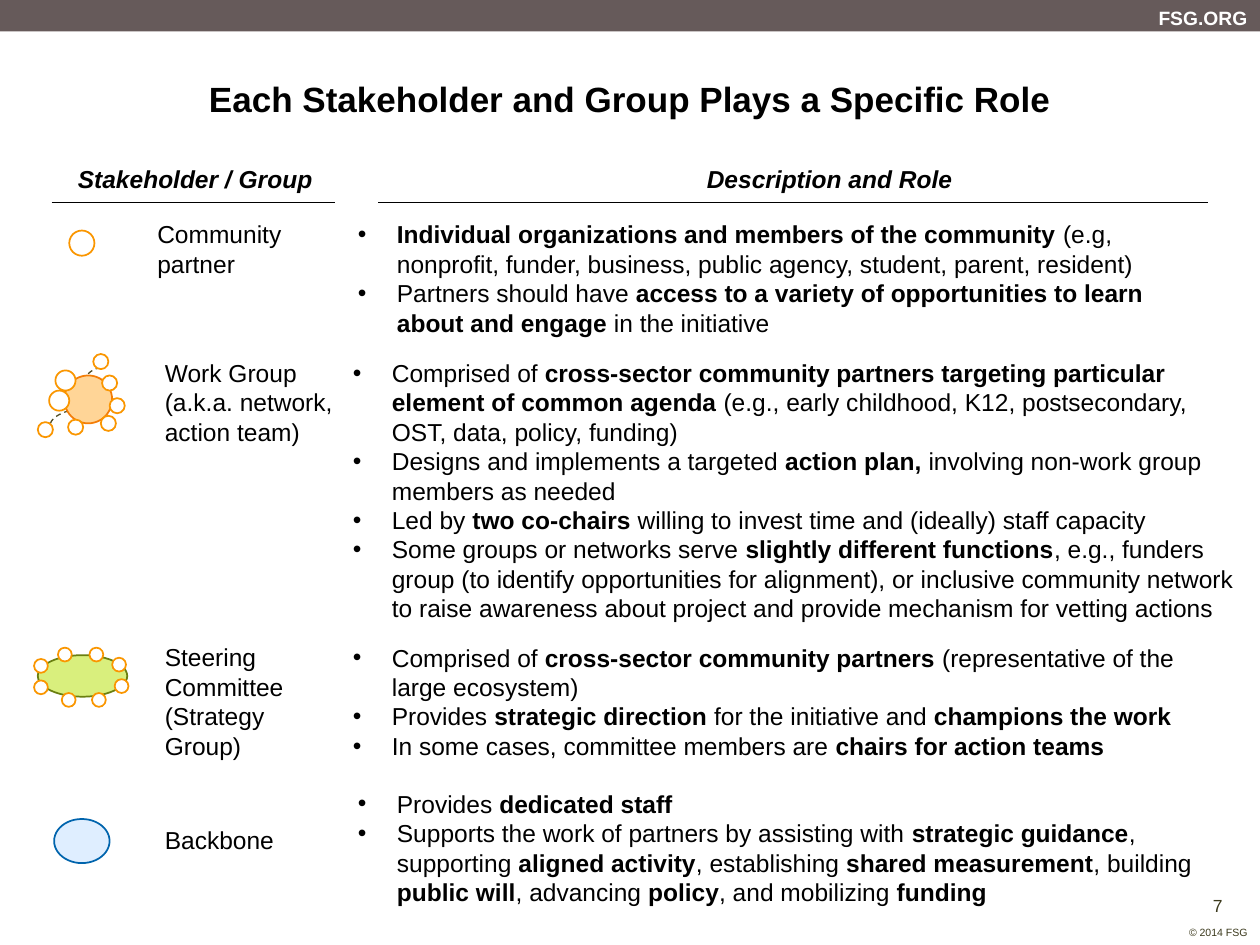
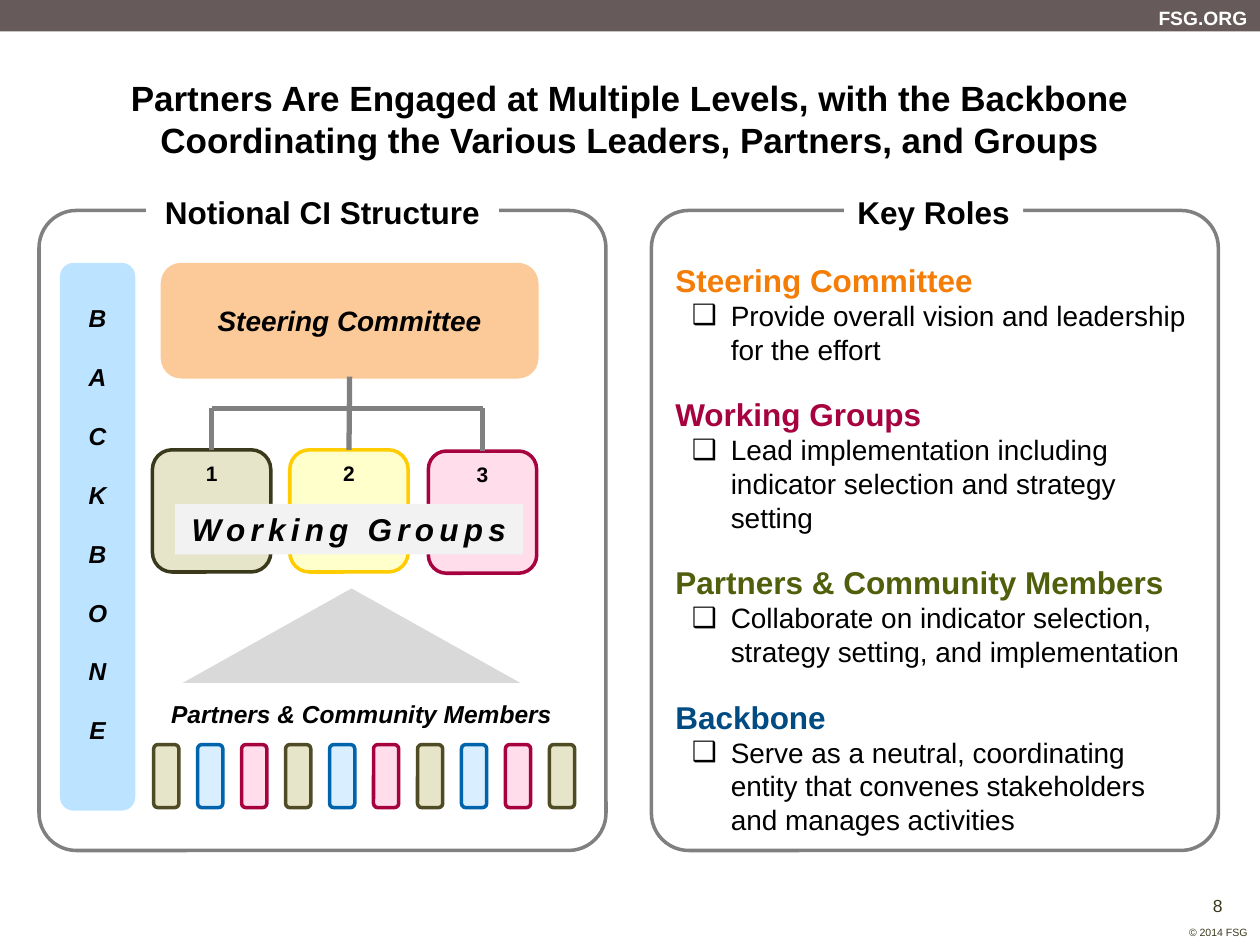
from itertools import cycle
from typing import NamedTuple

from lxml import etree
from pptx import Presentation
from pptx.dml.color import RGBColor
from pptx.enum.dml import MSO_LINE
from pptx.enum.shapes import MSO_CONNECTOR, MSO_SHAPE
from pptx.enum.text import MSO_ANCHOR, MSO_AUTO_SIZE, PP_ALIGN
from pptx.oxml.ns import qn
from pptx.util import Inches, Pt

RECT, ROUNDED = MSO_SHAPE.RECTANGLE, MSO_SHAPE.ROUNDED_RECTANGLE
OVAL, TRIANGLE = MSO_SHAPE.OVAL, MSO_SHAPE.ISOSCELES_TRIANGLE
STRAIGHT, CURVE = MSO_CONNECTOR.STRAIGHT, MSO_CONNECTOR.CURVE
DASH, NO_AUTOFIT = MSO_LINE.DASH, MSO_AUTO_SIZE.NONE
LEFT, CENTER, RIGHT = PP_ALIGN.LEFT, PP_ALIGN.CENTER, PP_ALIGN.RIGHT
TOP, MIDDLE = MSO_ANCHOR.TOP, MSO_ANCHOR.MIDDLE
BOTTOM_SIDE, TOP_SIDE = 2, 0

BLACK = RGBColor(0x00, 0x00, 0x00)
WHITE = RGBColor(0xFF, 0xFF, 0xFF)
BAND = RGBColor(0x66, 0x5A, 0x5A)
DARK_OLIVE = RGBColor(0x3B, 0x39, 0x1C)
OLIVE = RGBColor(0x4F, 0x4C, 0x25)
PALE_OLIVE = RGBColor(0xE6, 0xE4, 0xC9)
BEAD = RGBColor(0xFA, 0x96, 0x00)
ORANGE = RGBColor(0xF4, 0x7D, 0x07)
HUB = RGBColor(0xFF, 0xD5, 0x97)
PEACH = RGBColor(0xFC, 0xCA, 0x99)
GREEN = RGBColor(0x6A, 0x7F, 0x10)
DARK_GREEN = RGBColor(0x50, 0x5F, 0x0C)
LIME = RGBColor(0xD9, 0xEF, 0x7D)
BLUE = RGBColor(0x00, 0x64, 0xAD)
DARK_BLUE = RGBColor(0x00, 0x4B, 0x82)
ICE = RGBColor(0xDF, 0xEE, 0xFF)
PALE_BLUE = RGBColor(0xD9, 0xEF, 0xFF)
SKY = RGBColor(0xBC, 0xE3, 0xFF)
CRIMSON = RGBColor(0xA7, 0x02, 0x40)
PINK = RGBColor(0xFF, 0xDD, 0xEA)
YELLOW = RGBColor(0xFF, 0xCC, 0x00)
PALE_YELLOW = RGBColor(0xFF, 0xFF, 0xCC)
GREY = RGBColor(0x80, 0x80, 0x80)
MID_GREY = RGBColor(0xD9, 0xD9, 0xD9)
PALE_GREY = RGBColor(0xF2, 0xF2, 0xF2)

FONT = "Arial"
COLUMNS, ROWS = 100, 75  # square grid over the slide
CELL = Inches(0.1)


class Box(NamedTuple):
    """A region in grid columns and rows."""
    left: float
    top: float
    width: float
    height: float

    def inner(self, dx, dy, width, height):
        return Box(self.left + dx, self.top + dy, width, height)

    def emu(self):
        return [round(value * CELL) for value in self]


SLIDE = Box(0, 0, COLUMNS, ROWS)


# Text
def add_runs(paragraph, text, size, color=BLACK, bold=False, italic=False):
    """Stretches between asterisks are bold."""
    for index, stretch in enumerate(text.split("*")):
        if stretch:
            run = paragraph.add_run()
            run.text = stretch
            font = run.font
            font.name, font.size = FONT, Pt(size)
            font.bold, font.italic = bold or index % 2 == 1, italic
            font.color.rgb = color


def set_bullet(paragraph, char=None, margin=0.0, hanging=0.0):
    props = paragraph._p.get_or_add_pPr()
    props.set("marL", str(Inches(margin)))
    props.set("indent", str(-Inches(hanging)))
    if char:
        etree.SubElement(props, qn("a:buFont")).set("typeface", FONT)
        etree.SubElement(props, qn("a:buChar")).set("char", char)
    else:
        etree.SubElement(props, qn("a:buNone"))


def write(shape, lines, size, align=LEFT, anchor=TOP, wrap=True, gap=0, **style):
    frame = shape.text_frame
    frame.word_wrap, frame.vertical_anchor = wrap, anchor
    for index, line in enumerate(lines):
        paragraph = frame.add_paragraph() if index else frame.paragraphs[0]
        paragraph.alignment = align
        paragraph.space_before = Pt(gap if index else 0)
        add_runs(paragraph, line, size, **style)
    return frame


def add_text(slide, box, lines, size, **style):
    return write(slide.shapes.add_textbox(*box.emu()), lines, size, **style)


def open_body(placeholder, box):
    placeholder.left, placeholder.top, placeholder.width, placeholder.height = box.emu()
    frame = placeholder.text_frame
    frame.auto_size, frame.vertical_anchor = NO_AUTOFIT, TOP
    frame.word_wrap = True
    return frame


# Shapes and lines
def add_shape(shapes, kind, box, fill=None, line=None, width=2):
    shape = shapes.add_shape(kind, *box.emu())
    shape.shadow.inherit = False
    if fill is None:
        shape.fill.background()
    else:
        shape.fill.solid()
        shape.fill.fore_color.rgb = fill
    if line is None:
        shape.line.fill.background()
    else:
        shape.line.color.rgb = line
        shape.line.width = Pt(width)
    return shape


def add_line(shapes, start, end, color, width, kind=STRAIGHT):
    ends = [round(value * CELL) for value in (*start, *end)]
    line = shapes.add_connector(kind, *ends)
    line.line.color.rgb = color
    line.line.width = Pt(width)
    etree.SubElement(line._element.spPr, qn("a:effectLst"))
    return line


# Shared slide frame: band, title, page number, copyright
def add_frame(prs, layout, title, title_top, number):
    slide = prs.slides.add_slide(prs.slide_layouts.get_by_name(layout))
    add_shape(slide.shapes, RECT, SLIDE.inner(0, 0, COLUMNS, 2.5), BAND)
    add_text(slide, SLIDE.inner(90.9, 0, 9.1, 2.9), ["FSG.ORG"], 11, align=RIGHT,
             anchor=MIDDLE, wrap=False, color=WHITE, bold=True)
    page = add_text(slide, SLIDE.inner(94.8, 70.8, 3.7, 2.1), [str(number)], 10,
                    align=CENTER, anchor=MIDDLE, wrap=False, color=DARK_OLIVE)
    page.margin_top = page.margin_bottom = Inches(0.02)
    add_text(slide, SLIDE.inner(93.3, 73, 6.7, 2), ["© 2014 FSG"], 6, align=RIGHT,
             anchor=MIDDLE, wrap=False, color=DARK_OLIVE)

    heading = slide.shapes.title
    frame = open_body(heading, SLIDE.inner(4.3, title_top, 91.4, 7.2))
    frame.margin_top = frame.margin_bottom = 0
    write(heading, [title], 20, align=CENTER, anchor=MIDDLE, bold=True)
    return slide


# Icons of the stakeholder slide
def add_bead(shapes, box, x, y, size):
    add_shape(shapes, OVAL, box.inner(x, y, size, size), WHITE, BEAD, 1)


def draw_partner(shapes, box):
    add_bead(shapes, box, 0, 0, box.width)


def draw_work_group(shapes, box):
    for start, end in (((5, 1.1), (3.5, 2.7)), ((3.9, 4.3), (1, 5.6))):
        link = add_line(shapes, (box.left + start[0], box.top + start[1]),
                        (box.left + end[0], box.top + end[1]), OLIVE, 0.75, CURVE)
        link.line.dash_style = DASH
        link._element.spPr.find(qn("a:prstGeom")).set("prst", "curvedConnector2")
    add_shape(shapes, OVAL, box.inner(2.1, 1.7, 3.8, 3.8), HUB, ORANGE, 1)
    for x, y, size in ((4.4, 0, 1.2), (5, 4.9, 1.2), (5.1, 1.7, 1.2), (2.4, 5.2, 1.2),
                       (1.4, 1.3, 1.6), (5.7, 3.5, 1.2), (0, 5.4, 1.2), (0.9, 2.9, 1.6)):
        add_bead(shapes, box, x, y, size)


def draw_committee(shapes, box):
    add_shape(shapes, OVAL, box.inner(0.3, 0.6, 7.1, 3.3), LIME, GREEN, 1)
    for x, y in ((6.2, 0.8), (6.4, 2.5), (4.6, 3.6), (2.2, 3.6),
                 (0, 2.6), (0, 0.9), (4.4, 0), (1.9, 0)):
        add_bead(shapes, box, x, y, 1.1)


def draw_backbone(shapes, box):
    add_shape(shapes, OVAL, box, ICE, BLUE, 1)


# Icon, icon box, label, label box, list box, list
STAKEHOLDERS = [
    (draw_partner, Box(5.5, 18.3, 2, 2), ["Community partner"],
     Box(11.5, 16.9, 14, 5.5), Box(27.4, 16.9, 68.5, 10.4), [
        "*Individual organizations and members of the community *(e.g, nonprofit, funder, "
        "business, public agency, student, parent, resident)",
        "Partners should have *access to a variety of opportunities to learn about and "
        "engage* in the initiative"]),
    (draw_work_group, Box(3, 28.1, 6.9, 6.6), ["Work Group", "(a.k.a. network, action team)"],
     Box(12.1, 27.9, 16.9, 8.1), Box(27, 27.9, 73, 22.2), [
        "Comprised of *cross-sector community partners targeting particular element of common "
        "agenda *(e.g., early childhood, K12, postsecondary, OST, data, policy, funding)",
        "Designs and implements a targeted *action plan, *involving non-work group members "
        "as needed",
        "Led by *two co-chairs *willing to invest time and (ideally) staff capacity",
        "Some groups or networks serve *slightly different functions*, e.g., funders group "
        "(to identify opportunities for alignment), or inclusive community network to raise "
        "awareness about project and provide mechanism for vetting actions"]),
    (draw_committee, Box(2.7, 51.4, 7.5, 4.7), ["Steering Committee (Strategy Group)"],
     Box(12.1, 50.5, 15.3, 8), Box(27, 50.5, 71, 10.4), [
        "Comprised of *cross-sector community partners *(representative of the large ecosystem)",
        "Provides *strategic direction *for the initiative and *champions the work*",
        "In some cases, committee members are *chairs for action teams*"]),
    (draw_backbone, Box(4.3, 65, 4.4, 3.5), ["Backbone"],
     Box(12.1, 65, 14, 3.4), Box(27.4, 62.1, 68.6, 10.4), [
        "Provides *dedicated staff*",
        "Supports the work of partners by assisting with *strategic guidance*, supporting "
        "*aligned activity*, establishing *shared measurement*, building *public will*, "
        "advancing *policy*, and mobilizing *funding*"]),
]


def build_stakeholder_slide(prs):
    slide = add_frame(prs, "Comparison", "Each Stakeholder and Group Plays a Specific Role",
                      4.2, 7)
    # Column headings with their rules
    for heading, box, rule in (("Stakeholder / Group", Box(4, 12.5, 23, 3.4), (4.1, 26.6)),
                               ("Description and Role", Box(50, 12.5, 31.7, 3.4), (30, 95.9))):
        add_text(slide, box, [heading], 14, align=CENTER, bold=True, italic=True)
        add_line(slide.shapes, (rule[0], 16.1), (rule[1], 16.1), BLACK, 0.75)

    _, *bodies = slide.placeholders
    for body, (draw, icon, label, label_box, roles_box, roles) in zip(bodies, STAKEHOLDERS):
        draw(slide.shapes.add_group_shape().shapes, icon)
        add_text(slide, label_box, label, 14)
        open_body(body, roles_box)
        for paragraph in write(body, roles, 14).paragraphs:
            set_bullet(paragraph, "•", 0.31, 0.31)


# Regions of the structure slide
def draw_panel(slide, box, heading, heading_box):
    outline = add_shape(slide.shapes, ROUNDED, box, line=GREY)
    outline.adjustments[0] = 0.066
    cover = add_shape(slide.shapes, RECT, heading_box, WHITE)
    write(cover, [heading], 18, align=CENTER, wrap=False, bold=True)


def draw_structure(slide, box):
    shapes = slide.shapes
    backbone = add_shape(shapes, ROUNDED, box.inner(1.8, 4.3, 5.7, 43.2), SKY, SKY)
    write(backbone, "BACKBONE", 14, align=CENTER, anchor=MIDDLE, wrap=False, gap=16.8,
          bold=True, italic=True).margin_bottom = Inches(0.25)
    steering = add_shape(shapes, ROUNDED, box.inner(9.8, 4.3, 29.7, 8.9), PEACH, PEACH)
    write(steering, ["Steering Committee"], 16, align=CENTER, anchor=MIDDLE, wrap=False,
          bold=True, italic=True)

    # Working groups
    groups = []
    for number, (x, y, width, fill, line) in enumerate((
            (9, 19, 9.4, PALE_OLIVE, DARK_OLIVE), (19.9, 19, 9.4, PALE_YELLOW, YELLOW),
            (30.9, 19.1, 8.6, PINK, CRIMSON)), 1):
        group = add_shape(shapes, ROUNDED, box.inner(x, y, width, 9.7), fill, line)
        write(group, [str(number)], 12, align=CENTER, bold=True).margin_top = Inches(0.04)
        groups.append(group)

    # Tree from the committee to the groups
    bus = box.top + 15.7
    centers = [(group.left + group.width / 2) / CELL for group in groups]
    add_line(shapes, (centers[0], bus), (centers[-1], bus), GREY, 3)
    for center, group in zip(centers, groups):
        branch = add_line(shapes, (center, bus), (center, bus + 3), GREY, 3)
        if group is groups[1]:
            branch.begin_connect(steering, BOTTOM_SIDE)
        branch.end_connect(group, TOP_SIDE)

    banner = add_shape(shapes, RECT, box.inner(10.8, 23.3, 27.6, 4), PALE_GREY)
    frame = write(banner, ["Working Groups"], 18, align=CENTER, wrap=False,
                  bold=True, italic=True)
    frame.paragraphs[0].runs[0]._r.get_or_add_rPr().set("spc", "300")

    # Partners and community members
    add_shape(shapes, TRIANGLE, box.inner(11.4, 30, 26.8, 7.5), MID_GREY)
    add_text(slide, box.inner(9.5, 38.3, 32.4, 3.4), ["Partners & Community Members"], 14,
             wrap=False, bold=True, italic=True)
    colors = cycle(((PALE_OLIVE, OLIVE), (PALE_BLUE, BLUE), (PINK, CRIMSON)))
    for index, (fill, line) in zip(range(10), colors):
        add_shape(shapes, ROUNDED, box.inner(9.1 + 3.49 * index, 42.4, 2, 5), fill, line)


KEY_ROLES = [
    ("Steering Committee", ORANGE, "Provide overall vision and leadership for the effort"),
    ("Working Groups", CRIMSON,
     "Lead implementation including indicator selection and strategy setting"),
    ("Partners & Community Members", DARK_GREEN,
     "Collaborate on indicator selection, strategy setting, and implementation"),
    ("Backbone", DARK_BLUE,
     "Serve as a neutral, coordinating entity that convenes stakeholders and manages activities"),
]


def fill_key_roles(body, box):
    frame = open_body(body, box.inner(0.9, 3.5, box.width - 1.8, box.height - 4))
    for index, (role, color, duty) in enumerate(KEY_ROLES):
        heading = frame.add_paragraph() if index else frame.paragraphs[0]
        heading.space_before = Pt(16.8 if index else 0)
        set_bullet(heading)
        add_runs(heading, role, 18, color, bold=True)
        detail = frame.add_paragraph()
        detail.space_before = Pt(0)
        set_bullet(detail, "❑", 0.44, 0.31)
        add_runs(detail, duty, 16)


def build_structure_slide(prs):
    slide = add_frame(prs, "Title and Content",
                      "Partners Are Engaged at Multiple Levels, with the Backbone "
                      "Coordinating the Various Leaders, Partners, and Groups", 5.8, 8)
    structure = Box(3.1, 16.7, 45, 50.8)
    roles = structure.inner(48.6, 0, structure.width, structure.height)
    draw_panel(slide, structure, "Notional CI Structure", structure.inner(8.5, -1.9, 28, 4))
    draw_structure(slide, structure)
    draw_panel(slide, roles, "Key Roles", roles.inner(15.3, -1.9, 14.2, 4.4))
    fill_key_roles(slide.placeholders[1], roles)


def main():
    prs = Presentation()
    prs.slide_width, prs.slide_height = COLUMNS * CELL, ROWS * CELL
    build_stakeholder_slide(prs)
    build_structure_slide(prs)
    prs.save("out.pptx")


if __name__ == "__main__":
    main()
